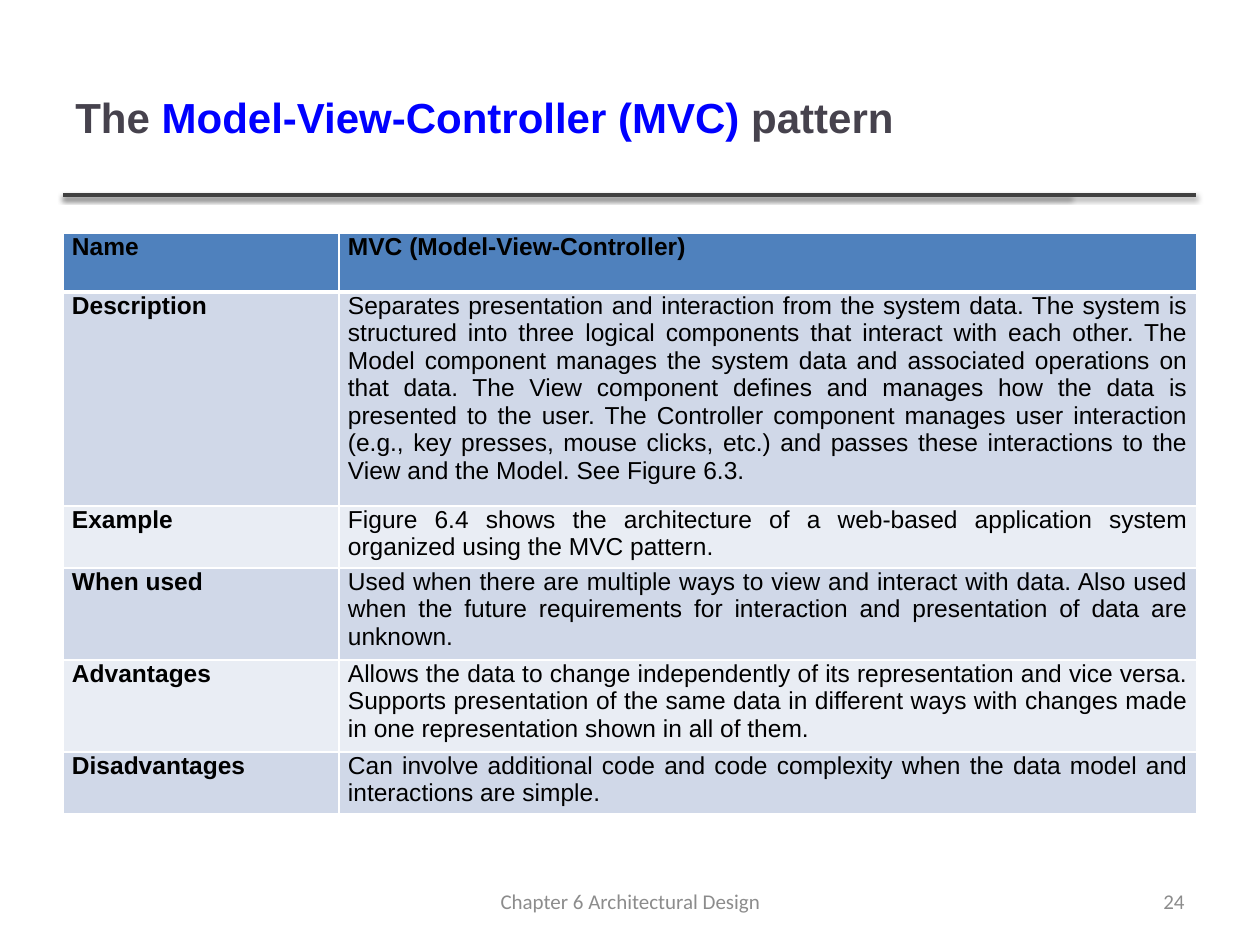
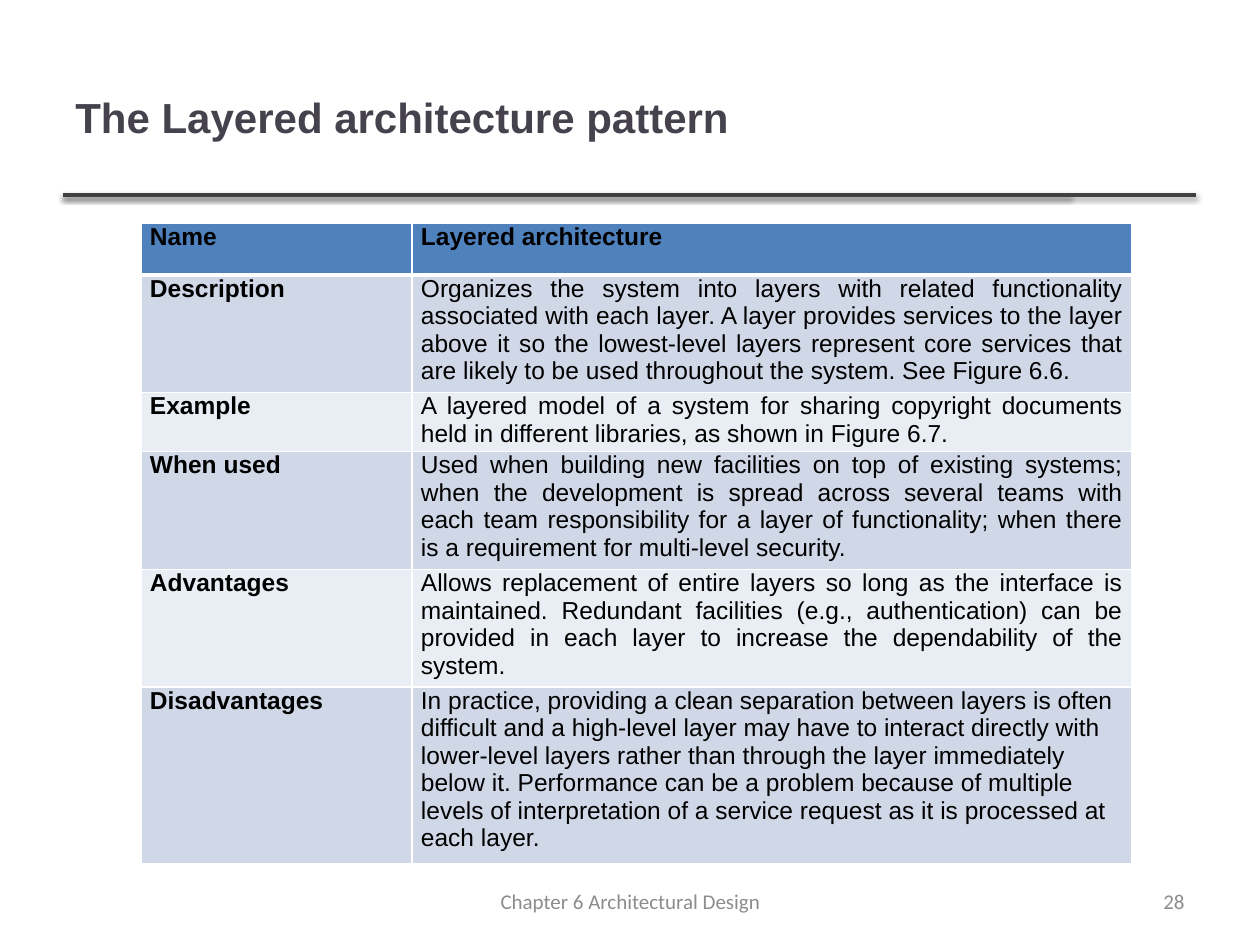
from dataclasses import dataclass

from lxml.etree import SubElement
from pptx import Presentation
from pptx.dml.color import RGBColor
from pptx.enum.shapes import MSO_CONNECTOR
from pptx.enum.text import MSO_ANCHOR, PP_ALIGN
from pptx.oxml import parse_xml
from pptx.oxml.ns import nsdecls, qn
from pptx.util import Emu, Pt


@dataclass(frozen=True)
class Theme:
    title: str = "46424D"
    accent: str = "0000FF"
    rule: str = "404040"
    footer: str = "8C8C8C"
    text: str = "000000"
    border: str = "FFFFFF"
    header: str = "4F81BD"
    bands: tuple = ("D0D8E8", "E9EDF4")
    body_font: str = "Arial"
    footer_font: str = "Calibri"
    title_size: int = 24
    table_size: int = 14
    footer_size: int = 12
    rule_width: int = 2
    border_width: int = 1
    header_border_width: int = 3


THEME = Theme()
ROW_NAMES = ("Name", "Description", "Example", "When used", "Advantages", "Disadvantages")
TITLE_BOX = (63, 38, 1005, 157)
FOOTER_BOX = (431, 876, 399, 50)
NUMBER_BOX = (903, 876, 294, 50)
RULE_BOX = (63, 195, 1133, 0)
RULE_OVERLAP = 1007
CELL_MARGIN = 9

MVC = {
    "number": 24,
    "title": (("The ", THEME.title), ("Model-View-Controller (MVC)", THEME.accent), (" pattern", THEME.title)),
    "box": (63, 233, 1134, 581),
    "name_width": 276,
    "row_heights": (59, 214, 62, 92, 92, 62),
    "last_align": PP_ALIGN.JUSTIFY,
    "entries": (
        "MVC (Model-View-Controller)",
        "Separates presentation and interaction from the system data. The system is structured into "
        "three logical components that interact with each other. The Model component manages the system "
        "data and associated operations on that data. The View component defines and manages how the "
        "data is presented to the user. The Controller component manages user interaction (e.g., key "
        "presses, mouse clicks, etc.) and passes these interactions to the View and the Model. "
        "See Figure 6.3.",
        "Figure 6.4 shows the architecture of a web-based application system organized using the "
        "MVC pattern.",
        "Used when there are multiple ways to view and interact with data. Also used when the future "
        "requirements for interaction and presentation of data are unknown.",
        "Allows the data to change independently of its representation and vice versa. Supports "
        "presentation of the same data in different ways with changes made in one representation "
        "shown in all of them.",
        "Can involve additional code and code complexity when the data model and interactions are simple.",
    ),
}

LAYERED = {
    "number": 28,
    "title": (("The Layered architecture pattern", THEME.title),),
    "box": (141, 223, 991, 602),
    "name_width": 271,
    "row_heights": (52, 110, 55, 110, 110, 165),
    "last_align": PP_ALIGN.LEFT,
    "entries": (
        "Layered architecture",
        "Organizes the system into layers with related functionality associated with each layer. "
        "A layer provides services to the layer above it so the lowest-level layers represent core "
        "services that are likely to be used throughout the system. See Figure 6.6.",
        "A layered model of a system for sharing copyright documents held in different libraries, "
        "as shown in Figure 6.7.",
        "Used when building new facilities on top of existing systems; when the development is spread "
        "across several teams with each team responsibility for a layer of functionality; when there "
        "is a requirement for multi-level security.",
        "Allows replacement of entire layers so long as the interface is maintained. Redundant "
        "facilities (e.g., authentication) can be provided in each layer to increase the dependability "
        "of the system.",
        "In practice, providing a clean separation between layers is often difficult and a high-level "
        "layer may have to interact directly with lower-level layers rather than through the layer "
        "immediately below it. Performance can be a problem because of multiple levels of "
        "interpretation of a service request as it is processed at each layer.",
    ),
}


def px(length):
    return Emu(round(length * 914400 / 126))


def set_all(target, values):
    for name, value in values.items():
        setattr(target, name, value)


def write_spans(para, spans, align, size, font, bold=False):
    para.alignment = align
    for text, color in spans:
        span = para.add_run()
        span.text = text
        set_all(span.font, {"size": Pt(size), "name": font, "bold": bold})
        span.font.color.rgb = RGBColor.from_string(color)


def add_label(page, box, spans, align, size, font, bold=False):
    frame = page.shapes.add_textbox(*map(px, box)).text_frame
    set_all(frame, {"word_wrap": True, "vertical_anchor": MSO_ANCHOR.MIDDLE})
    write_spans(frame.paragraphs[0], spans, align, size, font, bold)


def add_rule(page, box):
    left, top, width, _ = box
    for length in (RULE_OVERLAP, width):
        rule = page.shapes.add_connector(
            MSO_CONNECTOR.STRAIGHT, px(left), px(top), px(left + length), px(top))
        rule.line.width = Pt(THEME.rule_width)
        rule.line.color.rgb = RGBColor.from_string(THEME.rule)
        effects = SubElement(rule._element.spPr, qn("a:effectLst"))
        effects.append(parse_xml(
            f'<a:outerShdw {nsdecls("a")} blurRad="40000" dist="20000" dir="5400000" rotWithShape="0">'
            '<a:srgbClr val="000000"><a:alpha val="38000"/></a:srgbClr></a:outerShdw>'))


def set_borders(cell, row):
    top = THEME.header_border_width if row == 1 else THEME.border_width
    bottom = THEME.header_border_width if row == 0 else THEME.border_width
    widths = {"lnL": THEME.border_width, "lnR": THEME.border_width, "lnT": top, "lnB": bottom}
    properties = cell._tc.get_or_add_tcPr()
    for index, (side, width) in enumerate(widths.items()):
        properties.insert(index, parse_xml(
            f'<a:{side} {nsdecls("a")} w="{Pt(width)}"><a:solidFill>'
            f'<a:srgbClr val="{THEME.border}"/></a:solidFill></a:{side}>'))


def fill_cell(cell, row, text, align, bold):
    set_all(cell, {"margin_left": px(CELL_MARGIN), "margin_right": px(CELL_MARGIN),
                   "margin_top": 0, "margin_bottom": 0})
    color = THEME.bands[(row - 1) % 2] if row else THEME.header
    cell.fill.solid()
    cell.fill.fore_color.rgb = RGBColor.from_string(color)
    set_borders(cell, row)
    write_spans(cell.text_frame.paragraphs[0], ((text, THEME.text),), align,
                THEME.table_size, THEME.body_font, bold)


def add_pattern_table(page, box, pattern):
    table = page.shapes.add_table(len(ROW_NAMES), 2, *map(px, box)).table
    name_width = pattern["name_width"]
    for column, width in zip(table.columns, (name_width, box[2] - name_width)):
        column.width = px(width)
    last = len(ROW_NAMES) - 1
    for row, (name, entry) in enumerate(zip(ROW_NAMES, pattern["entries"])):
        table.rows[row].height = px(pattern["row_heights"][row])
        align = pattern["last_align"] if row == last else PP_ALIGN.JUSTIFY
        fill_cell(table.cell(row, 0), row, name, PP_ALIGN.JUSTIFY, True)
        fill_cell(table.cell(row, 1), row, entry, align, row == 0)


def add_footer(page, number):
    for box, text, align in (
        (FOOTER_BOX, "Chapter 6 Architectural Design", PP_ALIGN.CENTER),
        (NUMBER_BOX, str(number), PP_ALIGN.RIGHT),
    ):
        add_label(page, box, ((text, THEME.footer),), align, THEME.footer_size, THEME.footer_font)


def add_pattern_page(deck, pattern):
    page = deck.slides.add_slide(deck.slide_layouts[6])
    add_rule(page, RULE_BOX)
    add_label(page, TITLE_BOX, pattern["title"], PP_ALIGN.LEFT,
              THEME.title_size, THEME.body_font, True)
    add_pattern_table(page, pattern["box"], pattern)
    add_footer(page, pattern["number"])


def main():
    deck = Presentation()
    set_all(deck, {"slide_width": px(1260), "slide_height": px(945)})
    for pattern in (MVC, LAYERED):
        add_pattern_page(deck, pattern)
    deck.save("out.pptx")


if __name__ == "__main__":
    main()
